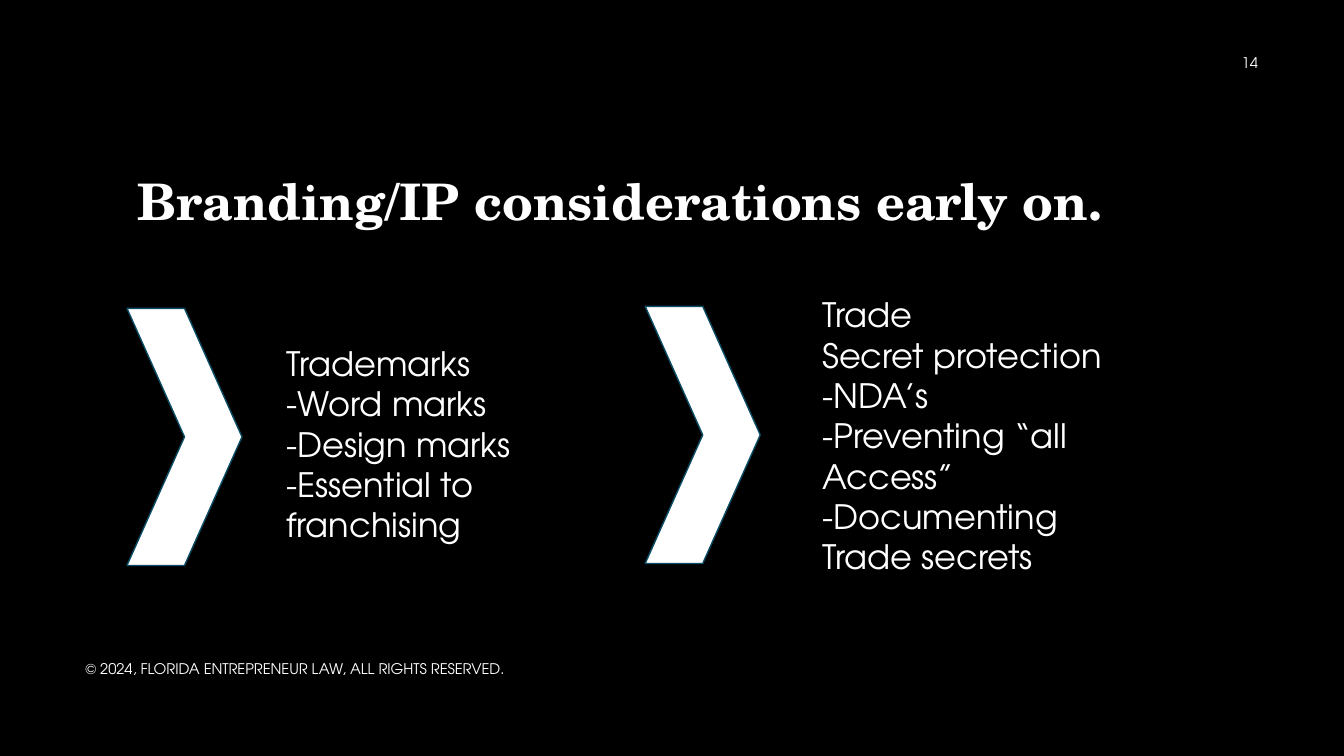
import dataclasses

import pptx
import pptx.dml.color
import pptx.enum.shapes
import pptx.enum.text
import pptx.oxml
import pptx.util

Cm = pptx.util.Cm
Align = pptx.enum.text.PP_ALIGN
Anchor = pptx.enum.text.MSO_ANCHOR


@dataclasses.dataclass(frozen=True)
class Theme:
    """Colours, fonts and type sizes of the slide."""

    background: str = "000000"
    foreground: str = "FFFFFF"
    outline: str = "0C4C64"
    heading_font: str = "TeX Gyre Schola"
    body_font: str = "TeX Gyre Adventor"
    heading_size: float = 36
    body_size: float = 24
    small_size: float = 10.5


THEME = Theme()
TRADEMARKS = [
    "Trademarks",
    "-Word marks",
    "-Design marks",
    "-Essential to",
    "franchising",
]
TRADE_SECRETS = [
    "Trade",
    "Secret protection",
    "-NDA’s",
    "-Preventing “all",
    "Access”",
    "-Documenting",
    "Trade secrets",
]


def rgb(value):
    """Turn a hex string into a colour."""
    return pptx.dml.color.RGBColor.from_string(value)


def place(shape, left, top, width, height):
    """Move and size a shape, in centimetres."""
    shape.left, shape.top = Cm(left), Cm(top)
    shape.width, shape.height = Cm(width), Cm(height)


def write(shape, lines, font_name, size, bold=False, align=Align.LEFT, anchor=Anchor.TOP):
    """Fill a shape with one formatted paragraph per line."""
    frame = shape.text_frame
    frame.text = "\n".join(lines)
    frame.word_wrap = True
    frame.auto_size = pptx.enum.text.MSO_AUTO_SIZE.NONE
    frame.vertical_anchor = anchor
    for paragraph in frame.paragraphs:
        paragraph.alignment = align
        paragraph.space_before = pptx.util.Pt(0)
        for run in paragraph.runs:
            run.font.name = font_name
            run.font.size = pptx.util.Pt(size)
            run.font.bold = bold
            run.font.color.rgb = rgb(THEME.foreground)


def fill_heading(title, text):
    """Place and write the slide title."""
    place(title, 3.2, 4.17, 26.75, 3.33)
    write(title, [text], THEME.heading_font, THEME.heading_size, bold=True)


def fill_list(body, lines, box):
    """Place and write a list without bullets or indents."""
    place(body, *box)
    write(body, lines, THEME.body_font, THEME.body_size)
    for paragraph in body.text_frame.paragraphs:
        properties = paragraph._p.get_or_add_pPr()
        properties.set("marL", "0")
        properties.set("indent", "0")
        properties.append(pptx.oxml.parse_xml(
            '<a:buNone xmlns:a="http://schemas.openxmlformats.org/drawingml/2006/main"/>'))


def add_chevron(slide, left, top):
    """Draw the chevron that leads into a list."""
    chevron = slide.shapes.add_shape(
        pptx.enum.shapes.MSO_SHAPE.CHEVRON, Cm(left), Cm(top), Cm(2.9), Cm(6.48))
    chevron.shadow.inherit = False
    chevron.fill.solid()
    chevron.fill.fore_color.rgb = rgb(THEME.foreground)
    chevron.line.color.rgb = rgb(THEME.outline)
    chevron.line.width = pptx.util.Pt(1)


def add_small_print(slide, text, left, top, width, align=Align.LEFT):
    """Add a single line of small print."""
    small_print = slide.shapes.add_textbox(Cm(left), Cm(top), Cm(width), Cm(1.02))
    write(small_print, [text], THEME.body_font, THEME.small_size,
          align=align, anchor=Anchor.MIDDLE)


def main():
    """Build and save the slide."""
    deck = pptx.Presentation()
    deck.slide_width, deck.slide_height = Cm(33.87), Cm(19.05)
    slide = deck.slides.add_slide(deck.slide_layouts.get_by_name("Two Content"))
    slide.background.fill.solid()
    slide.background.fill.fore_color.rgb = rgb(THEME.background)

    heading, trademarks, trade_secrets = slide.placeholders
    fill_heading(heading, "Branding/IP considerations early on.")
    fill_list(trademarks, TRADEMARKS, (6.96, 8.51, 6.22, 5.38))
    fill_list(trade_secrets, TRADE_SECRETS, (20.47, 7.29, 8, 7.44))
    add_chevron(slide, 3.2, 7.77)
    add_chevron(slide, 16.26, 7.72)
    add_small_print(slide, "© 2024, FLORIDA ENTREPRENEUR LAW, ALL RIGHTS RESERVED.",
                    1.9, 16.33, 21.59)
    add_small_print(slide, "14", 24.33, 1.07, 7.62, Align.RIGHT)
    deck.save("out.pptx")


if __name__ == "__main__":
    main()
